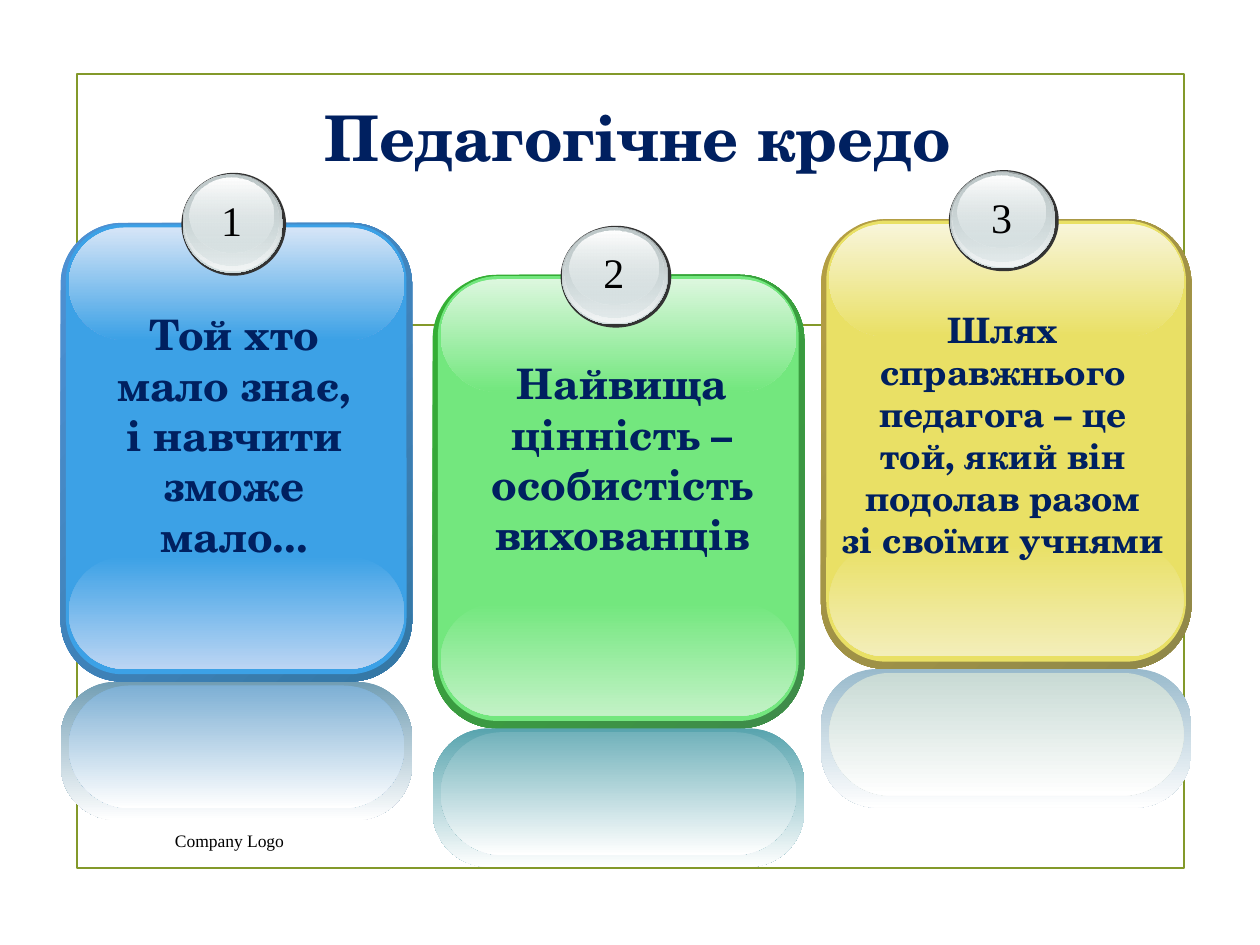
from lxml import etree
from pptx import Presentation
from pptx.dml.color import RGBColor
from pptx.enum import shapes, text
from pptx.oxml.ns import qn
from pptx.util import Pt

SERIF, PLAIN = "TeX Gyre Schola", "Times New Roman"
COLORS = {
    "frame": "83992A", "navy": "002060", "black": "000000", "white": "FFFFFF",
    "rim": "333333", "steel": "969E9F", "silver": "D6E1E2",
    "pearl": "F2F5F5", "ash": "C0CACB",
}
TITLE = "Педагогічне кредо"
FOOTER = "Company Logo"

# Boxes are left, top, width, height in points.
# Colours: rim start, rim end, face, top gloss, bottom gloss, two reflections.
CARDS = [
    {"number": "1", "box": (34.6, 127.4, 200.9, 262.1), "badge": (103.7, 98.8, 59.8, 58.8),
     "colors": ("4E91D4", "3477A4", "3CA1E6", "D6E5F7", "BBD5F3", "729EB4", "7DAFD4"),
     "text_box": (49, 172.8, 169.9, 152.6), "size": 24,
     "lines": ["Той хто мало знає,", "і навчити зможе мало..."]},
    {"number": "2", "box": (247.2, 157, 212.4, 259.2), "badge": (320.4, 129, 63.2, 58.2),
     "colors": ("34B034", "3F8B4A", "73E77E", "DCF7DE", "C2F2C6", "58A4AE", "72B2BB"),
     "text_box": (264.2, 200.9, 182.9, 123.8), "size": 24,
     "lines": ["Найвища цінність – особистість вихованців"]},
    {"number": "3", "box": (469.2, 125.3, 211.7, 257), "badge": (542.2, 97.2, 62.8, 57.8),
     "colors": ("B59F43", "8F8849", "E9E065", "F8F5DA", "F3EEBA", "99BACC", "C8DAD4"),
     "text_box": (472.3, 172.8, 201.6, 152.6), "size": 20,
     "lines": ["Шлях справжнього", "педагога – це той, який він подолав разом",
               "зі своїми учнями"]},
]

# Badge layers: left, top, width, height as shares of the badge;
# then start colour, end colour, start and end opacity in percent.
BADGE_LAYERS = [
    ((0, 0, 1, 1), "rim", None, 100, 100),
    ((.01, .01, .96, .96), "steel", "silver", 100, 100),
    ((.02, .01, .94, .94), "silver", "pearl", 0, 100),
    ((.03, .02, .9, .88), "ash", "silver", 100, 48),
    ((.08, .05, .8, .72), "white", "silver", 100, 38),
]


def rgb(color):
    return RGBColor.from_string(COLORS.get(color, color))


def add_shape(s, kind, box, start=None, end=None, adj=None, angle=90, alphas=(100, 100)):
    """Add a borderless shape with a solid, two-stop gradient or empty fill."""
    sp = s.shapes.add_shape(kind, *map(Pt, box))
    sp.shadow.inherit = False
    sp.line.fill.background()
    if adj is not None:
        sp.adjustments[0] = adj
    if start is None:
        sp.fill.background()
    elif end is None:
        sp.fill.solid()
        sp.fill.fore_color.rgb = rgb(start)
    else:
        sp.fill.gradient()
        sp.fill.gradient_angle = 360 - angle
        for stop, color, position in zip(sp.fill.gradient_stops, (start, end), (0, 1)):
            stop.color.rgb = rgb(color)
            stop.position = position
        for clr, alpha in zip(sp._element.spPr.iter(qn("a:srgbClr")), alphas):
            if alpha < 100:
                etree.SubElement(clr, qn("a:alpha")).set("val", str(alpha * 1000))
    return sp


def write(tf, lines, size, font, color, bold=False, align=text.PP_ALIGN.CENTER):
    tf.word_wrap = True
    for i, line in enumerate(lines):
        p = tf.add_paragraph() if i else tf.paragraphs[0]
        p.alignment = align
        r = p.add_run()
        r.text = line
        r.font.size, r.font.name, r.font.bold = Pt(size), font, bold
        r.font.color.rgb = rgb(color)


def add_text(s, box, *args, **kwargs):
    tf = s.shapes.add_textbox(*map(Pt, box)).text_frame
    write(tf, *args, **kwargs)
    return tf


def add_card(s, card):
    x, y, w, h = card["box"]
    rim, rim_end, face, top, bottom, mirror, mirror_face = card["colors"]
    gloss_x, gloss_w = x + 4.7, w - 9.2
    layers = [
        ((x, y, w, h), rim, rim_end, .175, 45),
        ((x + 3, y + .8, w - 6.2, h - 5), face, None, .167, 90),
        ((gloss_x, y + h - 71.5, gloss_w, 64.3), face, bottom, .5, 90),
        ((gloss_x, y + 2.6, gloss_w, 64.3), top, face, .5, 90),
        ((x, y + h, w, 79.2), mirror, "white", .404, 90),
        ((gloss_x, y + h + 2.2, gloss_w, 70.2), mirror_face, "white", .5, 90),
    ]
    for box, start, end, adj, angle in layers:
        add_shape(s, shapes.MSO_SHAPE.ROUNDED_RECTANGLE, box, start, end, adj, angle)

    bx, by, bw, bh = card["badge"]
    for (dx, dy, fw, fh), start, end, *alphas in BADGE_LAYERS:
        add_shape(s, shapes.MSO_SHAPE.OVAL, (bx + dx * bw, by + dy * bh, fw * bw, fh * bh),
                  start, end, alphas=alphas)
    add_text(s, (bx + .48 * bw - 17, by + 8.6, 34, 41.5), [card["number"]], 24, PLAIN, "black")


def main():
    prs = Presentation()
    prs.slide_width, prs.slide_height = Pt(720), Pt(540)
    s = prs.slides.add_slide(prs.slide_layouts[5])

    frame = add_shape(s, shapes.MSO_SHAPE.RECTANGLE, (43.9, 42.5, 632.9, 453.6))
    rule = s.shapes.add_connector(shapes.MSO_CONNECTOR.STRAIGHT,
                                  Pt(100.8), Pt(185.8), Pt(619.9), Pt(185.8))
    etree.SubElement(rule._element.spPr, qn("a:effectLst"))
    for sp in (frame, rule):
        sp.line.color.rgb = rgb("frame")
        sp.line.width = Pt(1.25)

    title = s.shapes.title
    title.left, title.top, title.width, title.height = map(Pt, (96.5, 26.6, 535.7, 103))
    title.text_frame.vertical_anchor = text.MSO_ANCHOR.MIDDLE
    write(title.text_frame, [TITLE], 36, SERIF, "navy", bold=True)

    footer = add_text(s, (92.9, 469.4, 401.8, 22.3), [FOOTER], 10, PLAIN, "black",
                      align=text.PP_ALIGN.LEFT)
    footer.vertical_anchor = text.MSO_ANCHOR.MIDDLE

    for card in CARDS:
        add_card(s, card)
    for card in CARDS:
        add_text(s, card["text_box"], card["lines"], card["size"], SERIF, "navy", bold=True)

    prs.save("out.pptx")


if __name__ == "__main__":
    main()
